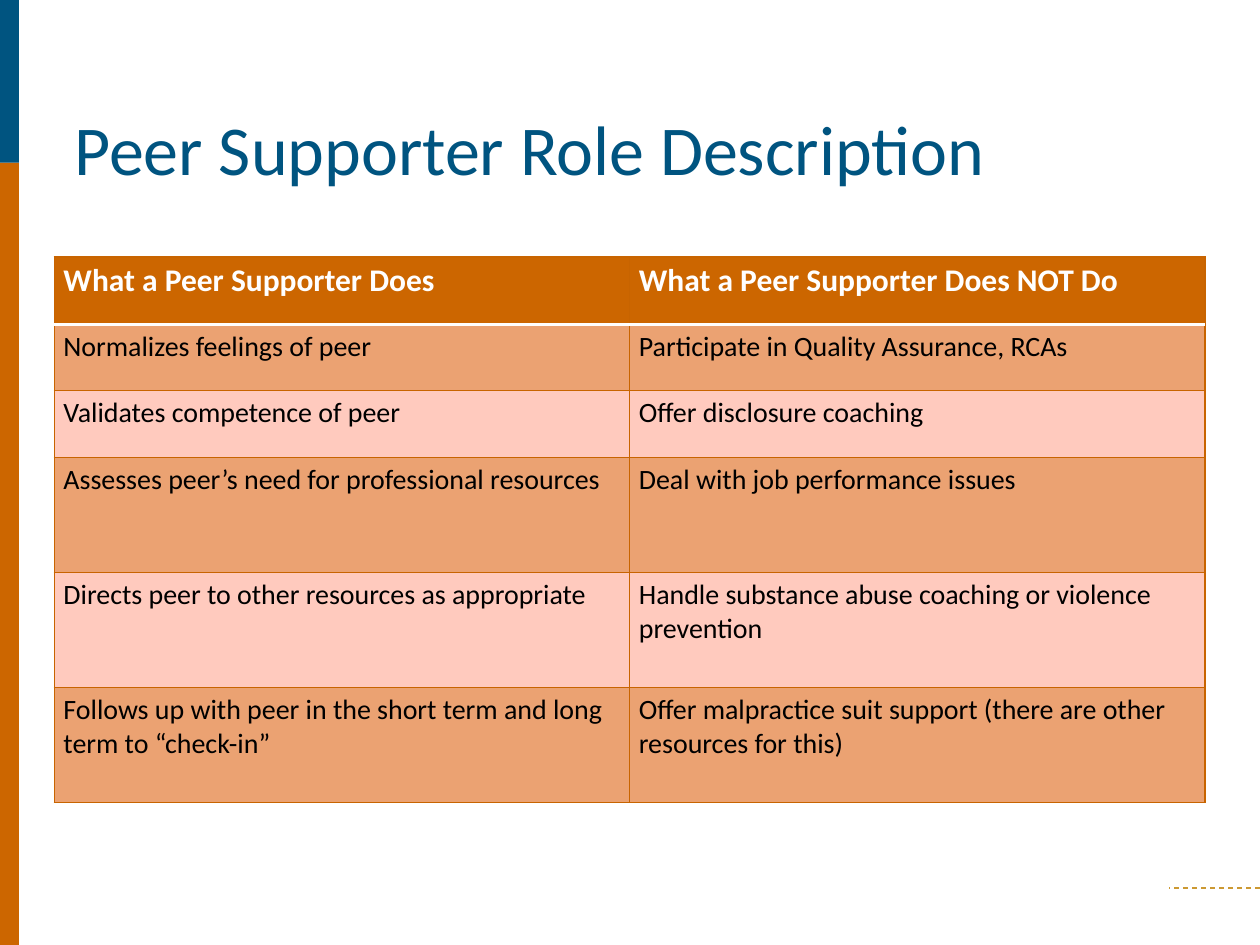
"""Build the peer supporter role description slide."""
import pptx
import pptx.dml.color
import pptx.enum.dml
import pptx.enum.shapes
import pptx.enum.text
import pptx.oxml
import pptx.oxml.ns
import pptx.util

Cm, Pt = pptx.util.Cm, pptx.util.Pt

COLOURS = {
    "blue": "005480", "orange": "CC6600", "tan": "EBA272", "pink": "FFCABE",
    "grid": "C86400", "gold": "CC9933", "white": "FFFFFF", "black": "000000",
}
HEADING = "Peer Supporter Role Description"
ROLES = [
    ("What a Peer Supporter Does", "What a Peer Supporter Does NOT Do"),
    ("Normalizes feelings of peer", "Participate in Quality Assurance, RCAs"),
    ("Validates competence of peer", "Offer disclosure coaching"),
    ("Assesses peer’s need for professional resources", "Deal with job performance issues"),
    ("Directs peer to other resources as appropriate",
     "Handle substance abuse coaching or violence prevention"),
    ("Follows up with peer in the short term and long term to “check-in”",
     "Offer malpractice suit support (there are other resources for this)"),
]
ROW_HEIGHTS = [1.36, 1.34, 1.34, 2.32, 2.32, 2.32]
COLUMN_WIDTH = 11.6
SIDE_BANDS = [("orange", 3.28, 15.77), ("blue", 0, 3.28)]
HEADING_FRAME = {
    "margin_left": Cm(0.25), "margin_right": Cm(0.25), "margin_top": 0, "margin_bottom": 0,
    "vertical_anchor": pptx.enum.text.MSO_ANCHOR.BOTTOM, "word_wrap": True,
    "auto_size": pptx.enum.text.MSO_AUTO_SIZE.NONE,
}
CELL_FRAME = {
    "margin_left": Cm(0.19), "margin_right": Cm(0.19),
    "margin_top": Cm(0.1), "margin_bottom": Cm(0.1),
}
HEADING_FONT = {"name": "Calibri", "size": Pt(40), "bold": False}
HEADER_FONT = {"name": "Calibri", "size": Pt(18), "bold": True}
ROLE_FONT = {"name": "Calibri", "size": Pt(16), "bold": False}


def rgb(colour):
    return pptx.dml.color.RGBColor.from_string(COLOURS[colour])


def apply(target, formats):
    for key, value in formats.items():
        setattr(target, key, value)


def write(paragraph, words, font, colour):
    run = paragraph.add_run()
    run.text = words
    apply(run.font, font)
    run.font.color.rgb = rgb(colour)


def paint(part, colour):
    part.fill.solid()
    part.fill.fore_color.rgb = rgb(colour)


def draw_borders(cell, edges):
    properties = cell._tc.get_or_add_tcPr()
    for position, (edge, (colour, points)) in enumerate(edges.items()):
        properties.insert(position, pptx.oxml.parse_xml(
            f'<a:{edge} {pptx.oxml.ns.nsdecls("a")} w="{Pt(points)}"><a:solidFill>'
            f'<a:srgbClr val="{COLOURS[colour]}"/></a:solidFill></a:{edge}>'))


def add_heading(slide):
    heading = slide.shapes.title
    apply(heading, {"left": Cm(1.25), "top": Cm(0.64), "width": Cm(24.15), "height": Cm(3.18)})
    apply(heading.text_frame, HEADING_FRAME)
    paragraph = heading.text_frame.paragraphs[0]
    paragraph.alignment = pptx.enum.text.PP_ALIGN.LEFT
    write(paragraph, HEADING, HEADING_FONT, "blue")


def add_decoration(slide):
    for colour, top, height in SIDE_BANDS:
        band = slide.shapes.add_shape(
            pptx.enum.shapes.MSO_SHAPE.RECTANGLE, 0, Cm(top), Cm(0.38), Cm(height))
        band.shadow.inherit = False
        paint(band, colour)
        band.line.fill.background()
    dashes = slide.shapes.add_connector(
        pptx.enum.shapes.MSO_CONNECTOR.STRAIGHT, Cm(25.4), Cm(17.9), Cm(23.57), Cm(17.9))
    apply(dashes.line, {"width": Pt(0.75), "dash_style": pptx.enum.dml.MSO_LINE.DASH})
    dashes.line.color.rgb = rgb("gold")
    dashes._element.spPr.append(pptx.oxml.parse_xml(
        f'<a:effectLst {pptx.oxml.ns.nsdecls("a")}/>'))


def add_roles(slide):
    roles = slide.shapes.add_table(
        len(ROLES), 2, Cm(1.09), Cm(5.18), Cm(2 * COLUMN_WIDTH), Cm(sum(ROW_HEIGHTS))).table
    for column in roles.columns:
        column.width = Cm(COLUMN_WIDTH)
    for index, (row, height, entries) in enumerate(zip(roles.rows, ROW_HEIGHTS, ROLES)):
        row.height = Cm(height)
        header = index == 0
        edges = dict.fromkeys(("lnL", "lnR", "lnT", "lnB"), ("grid", 0.75))
        if index < 2:
            edges["lnB" if header else "lnT"] = ("white", 2)
        for cell, words in zip(row.cells, entries):
            apply(cell, CELL_FRAME)
            paint(cell, "orange" if header else "tan" if index % 2 else "pink")
            draw_borders(cell, edges)
            write(cell.text_frame.paragraphs[0], words,
                  HEADER_FONT if header else ROLE_FONT, "white" if header else "black")


def main():
    deck = pptx.Presentation()
    apply(deck, {"slide_width": Cm(25.4), "slide_height": Cm(19.05)})
    slide = deck.slides.add_slide(deck.slide_layouts[5])
    add_decoration(slide)
    add_heading(slide)
    add_roles(slide)
    deck.save("out.pptx")


if __name__ == "__main__":
    main()
